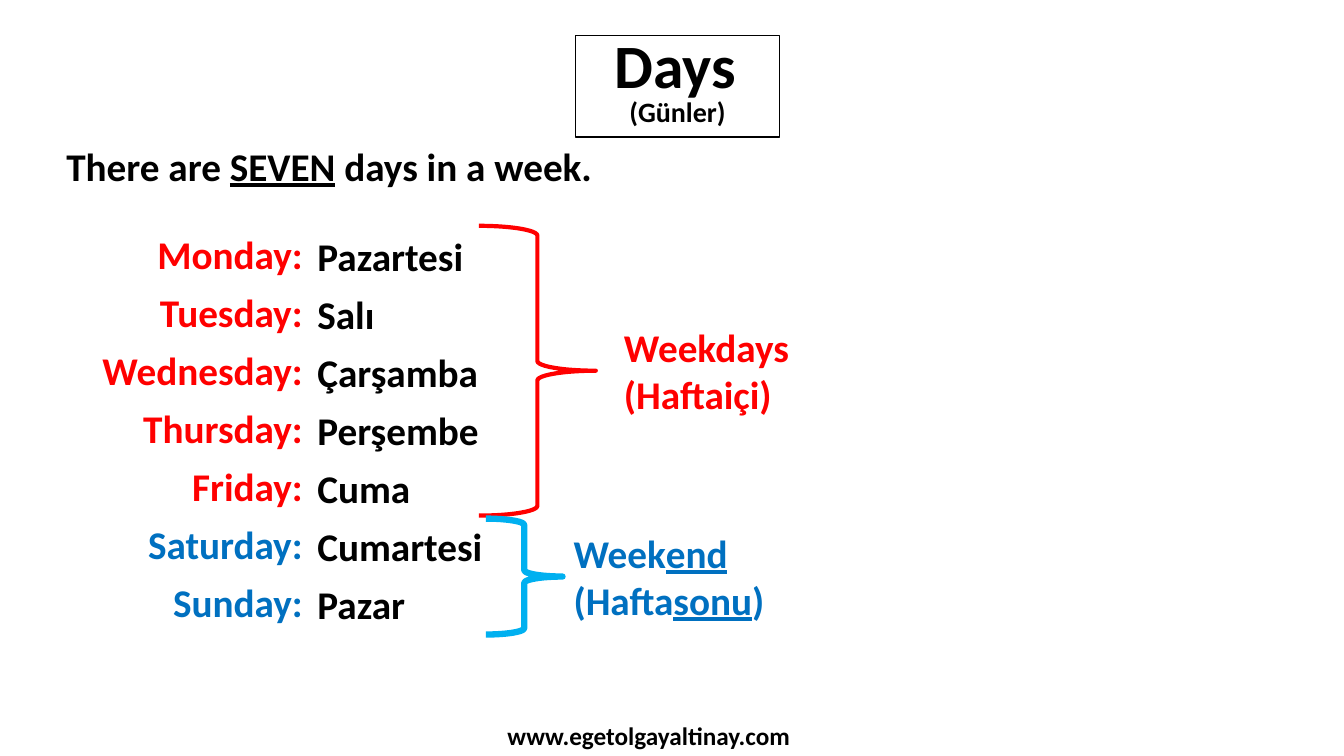
from dataclasses import dataclass
from pptx import Presentation
from pptx.dml.color import RGBColor
from pptx.enum.shapes import MSO_SHAPE
from pptx.enum.text import MSO_AUTO_SIZE, PP_ALIGN
from pptx.util import Inches, Pt

RECTANGLE, BRACE = MSO_SHAPE.RECTANGLE, MSO_SHAPE.RIGHT_BRACE
LEFT, CENTER, RIGHT = PP_ALIGN.LEFT, PP_ALIGN.CENTER, PP_ALIGN.RIGHT
GROW = MSO_AUTO_SIZE.SHAPE_TO_FIT_TEXT


@dataclass(frozen=True)
class Theme:
    font: str = "Calibri"
    black: str = "000000"
    white: str = "FFFFFF"
    weekday: str = "FF0000"
    weekend: str = "0070C0"
    weekend_brace: str = "00B0F0"
    title: int = 44
    body: int = 28
    subtitle: int = 20
    footer: int = 18


THEME = Theme()
WIDTH, HEIGHT = 13.33, 7.5
ROW = 0.575  # pitch of the day list
LINE_HEIGHT = 0.57

WEEKDAYS = [("Monday:", "Pazartesi"), ("Tuesday:", "Salı"), ("Wednesday:", "Çarşamba"),
            ("Thursday:", "Perşembe"), ("Friday:", "Cuma")]
WEEKEND = [("Saturday:", "Cumartesi"), ("Sunday:", "Pazar")]


def add_text(page, box, text, size=THEME.body, color=THEME.black, align=LEFT):
    """Each line becomes a paragraph; words between underscores are underlined."""
    frame = page.shapes.add_textbox(*map(Inches, box)).text_frame
    frame.word_wrap = True
    frame.auto_size = GROW
    for index, line in enumerate(text.split("\n")):
        para = frame.add_paragraph() if index else frame.paragraphs[0]
        para.alignment = align
        for part, words in enumerate(line.split("_")):
            if not words:
                continue
            span = para.add_run()
            span.text = words
            span.font.name = THEME.font
            span.font.size = Pt(size)
            span.font.bold = True
            span.font.underline = part % 2 == 1
            span.font.color.rgb = RGBColor.from_string(color)


def add_outline(page, kind, box, color, weight, fill=None):
    shape = page.shapes.add_shape(kind, *map(Inches, box))
    shape.shadow.inherit = False
    shape.line.color.rgb = RGBColor.from_string(color)
    shape.line.width = Pt(weight)
    if fill:
        shape.fill.solid()
        shape.fill.fore_color.rgb = RGBColor.from_string(fill)
    else:
        shape.fill.background()


def add_title(page, box):
    left, top, width, height = box
    add_outline(page, RECTANGLE, box, THEME.black, 1, THEME.white)
    add_text(page, (left - 0.02, top - 0.13, width, 0.84), "Days", size=THEME.title, align=CENTER)
    add_text(page, (left, top + 0.54, width, 0.44), "(Günler)", size=THEME.subtitle, align=CENTER)


def add_days(page, box, days, color):
    """English names right-aligned against the left-aligned Turkish ones."""
    left, top, width, _ = box
    column = width / 2
    for row, (english, turkish) in enumerate(days):
        y = top + row * ROW
        add_text(page, (left, y, column, LINE_HEIGHT), english, color=color, align=RIGHT)
        add_text(page, (left + column - 0.05, y + 0.02, column, LINE_HEIGHT), turkish)


def add_group_label(page, box, text, color, brace_color, weight, gap):
    """Brace fills the box; its label stands to the right of the point."""
    left, top, width, height = box
    add_outline(page, BRACE, box, brace_color, weight)
    label_height = 1.04
    label_top = top + (height - label_height) / 2
    add_text(page, (left + width + gap, label_top, 2.42, label_height), text, color=color)


def main():
    deck = Presentation()
    deck.slide_width, deck.slide_height = Inches(WIDTH), Inches(HEIGHT)
    page = deck.slides.add_slide(deck.slide_layouts[6])

    # Heading and opening sentence
    add_title(page, (5.71, 0.35, 2.02, 1.01))
    add_text(page, (0.56, 1.36, 7.37, LINE_HEIGHT), "There are _SEVEN_ days in a week.")

    # Day list
    days_left, days_top, days_width = 0.56, 2.24, 5.08
    split = len(WEEKDAYS) * ROW
    add_days(page, (days_left, days_top, days_width, split), WEEKDAYS, THEME.weekday)
    add_days(page, (days_left, days_top + split, days_width, len(WEEKEND) * ROW),
             WEEKEND, THEME.weekend)

    # Braces with group names
    add_group_label(page, (4.75, days_top, 1.16, split), "Weekdays\n(Haftaiçi)",
                    THEME.weekday, THEME.weekday, 3, gap=0.18)
    add_group_label(page, (4.82, days_top + split + 0.03, 0.76, len(WEEKEND) * ROW),
                    "Week_end_\n(Hafta_sonu_)", THEME.weekend, THEME.weekend_brace, 4.5, gap=0.01)

    # Footer
    add_text(page, (4.22, HEIGHT - 0.4, 4.43, 0.4), "www.egetolgayaltinay.com",
             size=THEME.footer, align=CENTER)
    deck.save("out.pptx")


if __name__ == "__main__":
    main()
